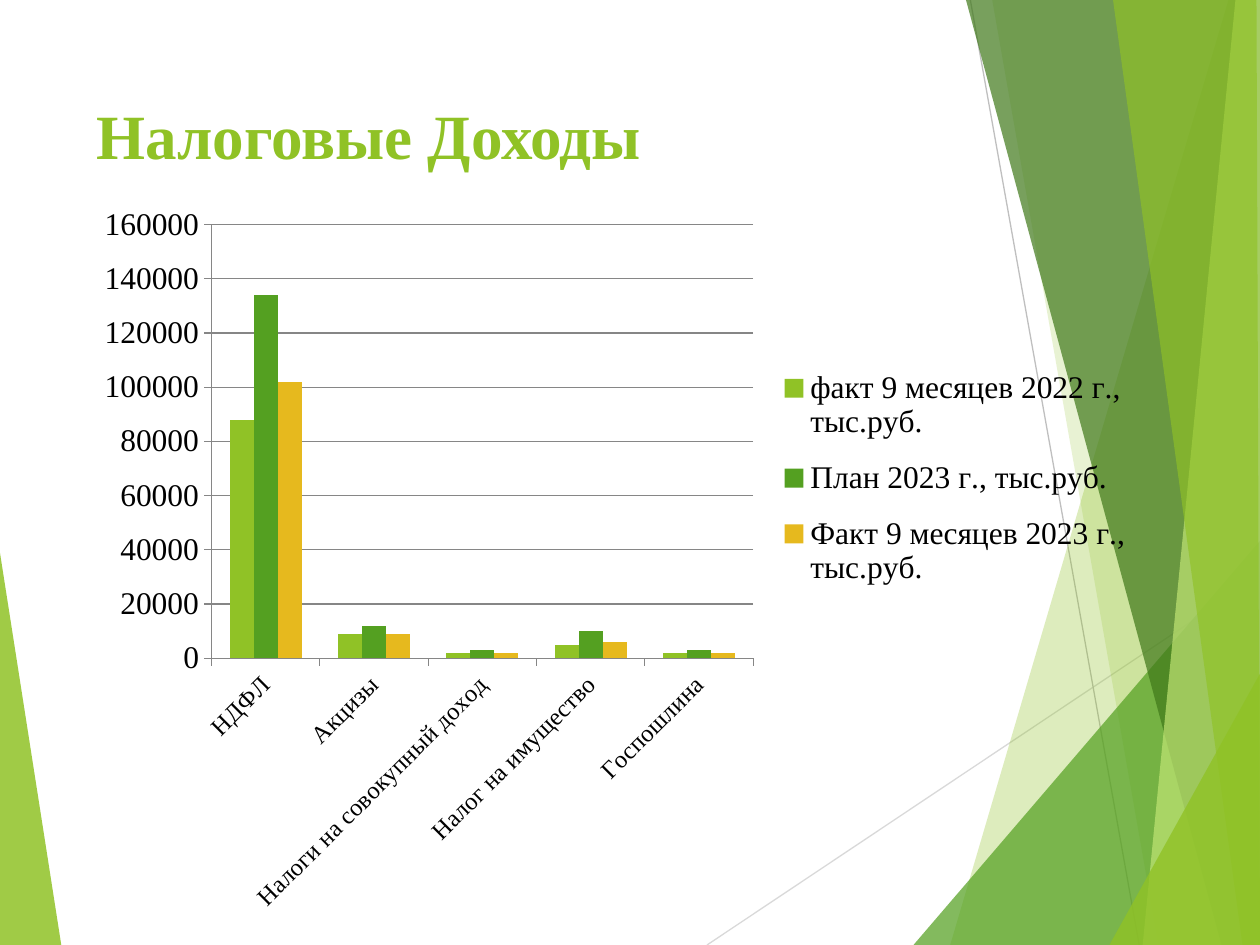
from lxml.etree import SubElement
from pptx import Presentation
from pptx.chart.data import CategoryChartData
from pptx.dml.color import RGBColor
from pptx.enum.chart import XL_CHART_TYPE, XL_LEGEND_POSITION, XL_TICK_MARK
from pptx.enum.text import MSO_ANCHOR
from pptx.oxml import parse_xml
from pptx.oxml.ns import nsdecls, qn
from pptx.util import Pt

LIME = RGBColor(0x90, 0xC2, 0x26)
GREEN = RGBColor(0x54, 0xA0, 0x21)
DARK = RGBColor(0x3F, 0x78, 0x19)
PALE = RGBColor(0xC0, 0xE4, 0x74)
GOLD = RGBColor(0xE6, 0xB9, 0x1E)
BLACK = RGBColor(0, 0, 0)
GRAY = RGBColor(0x86, 0x86, 0x86)
SILVER = RGBColor(0xBF, 0xBF, 0xBF)
MIST = RGBColor(0xD9, 0xD9, 0xD9)
SERIF = "Times New Roman"
WIDE, HIGH = 720, 540


def add_facet(shapes, points, color, alpha):
    pen = shapes.build_freeform(*points[0], scale=Pt(1))
    pen.add_line_segments(points[1:], close=True)
    facet = pen.convert_to_shape()
    facet.shadow.inherit = False
    facet.line.fill.background()
    facet.fill.solid()
    facet.fill.fore_color.rgb = color
    tint = facet.fill._xPr.find(".//" + qn("a:srgbClr"))
    SubElement(tint, qn("a:alpha")).set("val", str(alpha * 1000))


def set_place(part, index, inner, box):
    old = part.find(qn("c:layout"))
    if old is not None:
        part.remove(old)
    target = '<c:layoutTarget val="inner"/>' if inner else ""
    modes = '<c:xMode val="edge"/><c:yMode val="edge"/>'
    sizes = "".join(f'<c:{key} val="{val}"/>' for key, val in zip("xywh", box))
    part.insert(index, parse_xml(
        f'<c:layout {nsdecls("c")}><c:manualLayout>{target}{modes}{sizes}'
        '</c:manualLayout></c:layout>'))


deck = Presentation()
deck.slide_width, deck.slide_height = Pt(WIDE), Pt(HIGH)
slide = deck.slides.add_slide(deck.slide_layouts[6])
shapes = slide.shapes

add_facet(shapes, [(0, 316), (35.3, HIGH), (0, HIGH)], LIME, 85)

for start, end, color in [
    ((404, HIGH), (WIDE, 329), MIST),
    ((554.5, 0), (651, HIGH), SILVER),
]:
    line = shapes.add_connector(1, *map(Pt, start + end))
    line.line.color.rgb = color
    line.line.width = Pt(0.75)
    SubElement(line._element.spPr, qn("a:effectLst"))

for top, foot, color, alpha in [
    ((702, 0), 543, LIME, 30),
    ((567, 0), 662, LIME, 20),
    ((WIDE, 309), 522.5, GREEN, 72),
    ((552, 0), 698.5, DARK, 70),
    ((706.5, 0), 653, PALE, 70),
    ((636, 0), 710, LIME, 65),
    ((WIDE, 385), 634.5, LIME, 80),
]:
    edge = 718.5 if foot == 710 else WIDE
    points = [top, (foot, HIGH), (WIDE, HIGH)]
    if top[1] == 0:
        points.append((edge, 0))
    add_facet(shapes, points, color, alpha)

title = shapes.add_textbox(Pt(48), Pt(48), Pt(500), Pt(104))
frame = title.text_frame
frame.word_wrap = True
frame.vertical_anchor = MSO_ANCHOR.TOP
frame.margin_top = Pt(7)
run = frame.paragraphs[0].add_run()
run.text = "Налоговые Доходы"
run.font.name = SERIF
run.font.size = Pt(36)
run.font.bold = True
run.font.color.rgb = LIME

data = CategoryChartData()
data.categories = ["НДФЛ", "Акцизы", "Налоги на совокупный доход",
                   "Налог на имущество", "Госпошлина"]
rows = [
    ("факт 9 месяцев 2022 г., тыс.руб.", (88000, 9000, 2000, 5000, 2000), LIME),
    ("План 2023 г., тыс.руб.", (134000, 12000, 3000, 10000, 3000), GREEN),
    ("Факт 9 месяцев 2023 г., тыс.руб.", (102000, 9000, 2000, 6000, 2000), GOLD),
]
for name, vals, color in rows:
    data.add_series(name, vals)
chart = shapes.add_chart(XL_CHART_TYPE.COLUMN_CLUSTERED, Pt(48), Pt(111.6),
                         Pt(607), Pt(420), data).chart
chart.has_title = False
chart.font.name = "Cabin"
chart.font.size = Pt(18)
chart.font.color.rgb = BLACK

plot = chart.plots[0]
plot.gap_width = 150
plot.overlap = 0
plot.vary_by_categories = False
for series, (name, vals, color) in zip(plot.series, rows):
    series.format.fill.solid()
    series.format.fill.fore_color.rgb = color

across, up = chart.category_axis, chart.value_axis
up.minimum_scale, up.maximum_scale, up.major_unit = 0, 160000, 20000
up.has_major_gridlines = True
for axis, size in [(across, 14), (up, 18)]:
    axis.major_tick_mark = XL_TICK_MARK.OUTSIDE
    axis.format.line.color.rgb = GRAY
    axis.format.line.width = Pt(0.75)
    font = axis.tick_labels.font
    font.name = SERIF
    font.size = Pt(size)
    font.color.rgb = BLACK
across._element.txPr.bodyPr.set("rot", "-2700000")
grid = up.major_gridlines.format.line
grid.color.rgb = GRAY
grid.width = Pt(0.75)

chart.has_legend = True
legend = chart.legend
legend.position = XL_LEGEND_POSITION.RIGHT
legend.include_in_layout = False
legend.font.name = SERIF
legend.font.size = Pt(18)
legend.font.color.rgb = BLACK
set_place(plot._element.getparent(), 0, True, (0.12, 0.04, 0.51, 0.59))
set_place(legend._element, 1, False, (0.65, 0.21, 0.34, 0.35))

deck.save("out.pptx")
